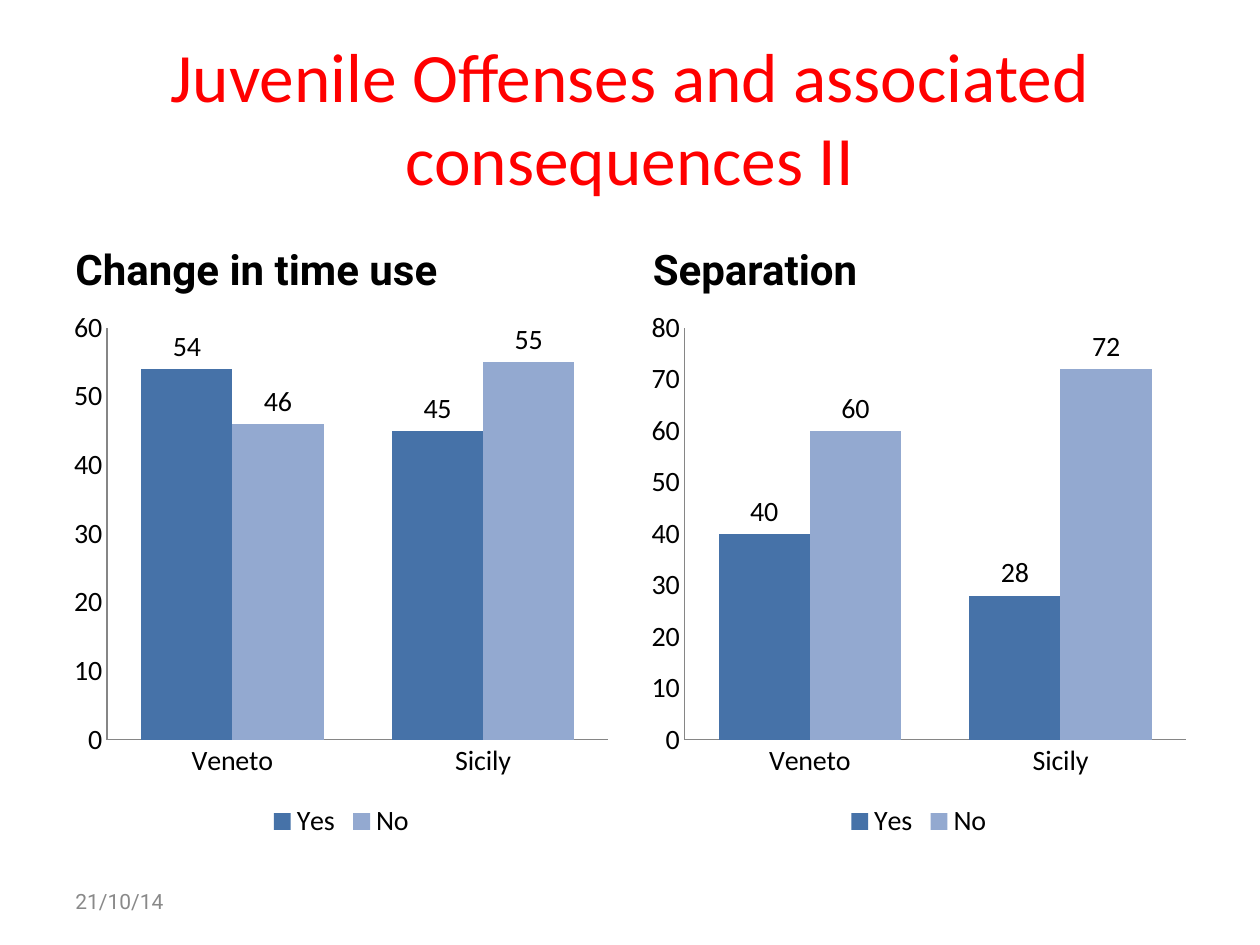
from dataclasses import dataclass

from pptx import Presentation
from pptx.chart.data import CategoryChartData
from pptx.dml.color import RGBColor
from pptx.enum import chart as charts, text
from pptx.util import Cm, Pt


@dataclass(frozen=True)
class Theme:
    title_color: str = "FF0000"
    text_color: str = "000000"
    date_color: str = "898989"
    axis_color: str = "868686"
    series_colors: tuple = ("4672A8", "93A9D0")
    heading_font: str = "Calibri"
    body_font: str = "Roboto"
    title_size: float = 39.6
    heading_size: int = 24
    chart_size: int = 16
    date_size: int = 12


theme = Theme()
presentation = Presentation()
presentation.slide_width = Cm(25.4)
presentation.slide_height = Cm(19.05)
slide = presentation.slides.add_slide(presentation.slide_layouts[6])


def add_text(content, left, top, width, height, *, size, color, font=theme.body_font,
             bold=False, align=text.PP_ALIGN.LEFT, anchor=text.MSO_ANCHOR.MIDDLE):
    box = slide.shapes.add_textbox(Cm(left), Cm(top), Cm(width), Cm(height))
    frame = box.text_frame
    frame.word_wrap = True
    frame.vertical_anchor = anchor
    paragraph = frame.paragraphs[0]
    paragraph.alignment = align
    run = paragraph.add_run()
    run.text = content
    run.font.name = font
    run.font.size = Pt(size)
    run.font.bold = bold
    run.font.color.rgb = RGBColor.from_string(color)


def add_column_chart(series_values, left, top, width, height, axis_maximum):
    data = CategoryChartData(number_format="General")
    data.categories = ["Veneto", "Sicily"]
    for name, values in series_values.items():
        data.add_series(name, values)
    chart = slide.shapes.add_chart(
        charts.XL_CHART_TYPE.COLUMN_CLUSTERED,
        Cm(left), Cm(top), Cm(width), Cm(height), data).chart
    chart.has_title = False
    chart.font.name = theme.heading_font
    chart.font.size = Pt(theme.chart_size)
    chart.font.color.rgb = RGBColor.from_string(theme.text_color)
    chart.has_legend = True
    chart.legend.position = charts.XL_LEGEND_POSITION.BOTTOM
    chart.legend.include_in_layout = False

    for axis in (chart.category_axis, chart.value_axis):
        axis.has_major_gridlines = False
        axis.major_tick_mark = charts.XL_TICK_MARK.NONE
        axis.minor_tick_mark = charts.XL_TICK_MARK.NONE
        axis.format.line.color.rgb = RGBColor.from_string(theme.axis_color)
        axis.format.line.width = Pt(0.75)
    chart.value_axis.minimum_scale = 0
    chart.value_axis.maximum_scale = axis_maximum
    chart.value_axis.major_unit = 10

    plot = chart.plots[0]
    plot.vary_by_categories = False
    plot.gap_width = 75
    plot.overlap = 0
    for series, color in zip(plot.series, theme.series_colors):
        series.format.fill.solid()
        series.format.fill.fore_color.rgb = RGBColor.from_string(color)
        series.data_labels.show_value = True
        series.data_labels.position = charts.XL_LABEL_POSITION.OUTSIDE_END


margin = 1.27
content_width = 25.4 - 2 * margin
column_width = 11.22

add_text("Juvenile Offenses and associated consequences II",
         margin, 0.76, content_width, 3.18, size=theme.title_size,
         color=theme.title_color, font=theme.heading_font, align=text.PP_ALIGN.CENTER)

panels = [
    ("Change in time use", {"Yes": (54, 45), "No": (46, 55)}, 60),
    ("Separation", {"Yes": (40, 28), "No": (60, 72)}, 80),
]
for index, (heading, series_values, axis_maximum) in enumerate(panels):
    left = margin + index * (content_width - column_width)
    add_text(heading, left, 4.27, column_width, 1.78, size=theme.heading_size,
             color=theme.text_color, bold=True, anchor=text.MSO_ANCHOR.BOTTOM)
    add_column_chart(series_values, left, 6.05, column_width, 10.97, axis_maximum)

add_text("21/10/14", margin, 17.66, 5.93, 1.01,
         size=theme.date_size, color=theme.date_color)

presentation.save("out.pptx")
